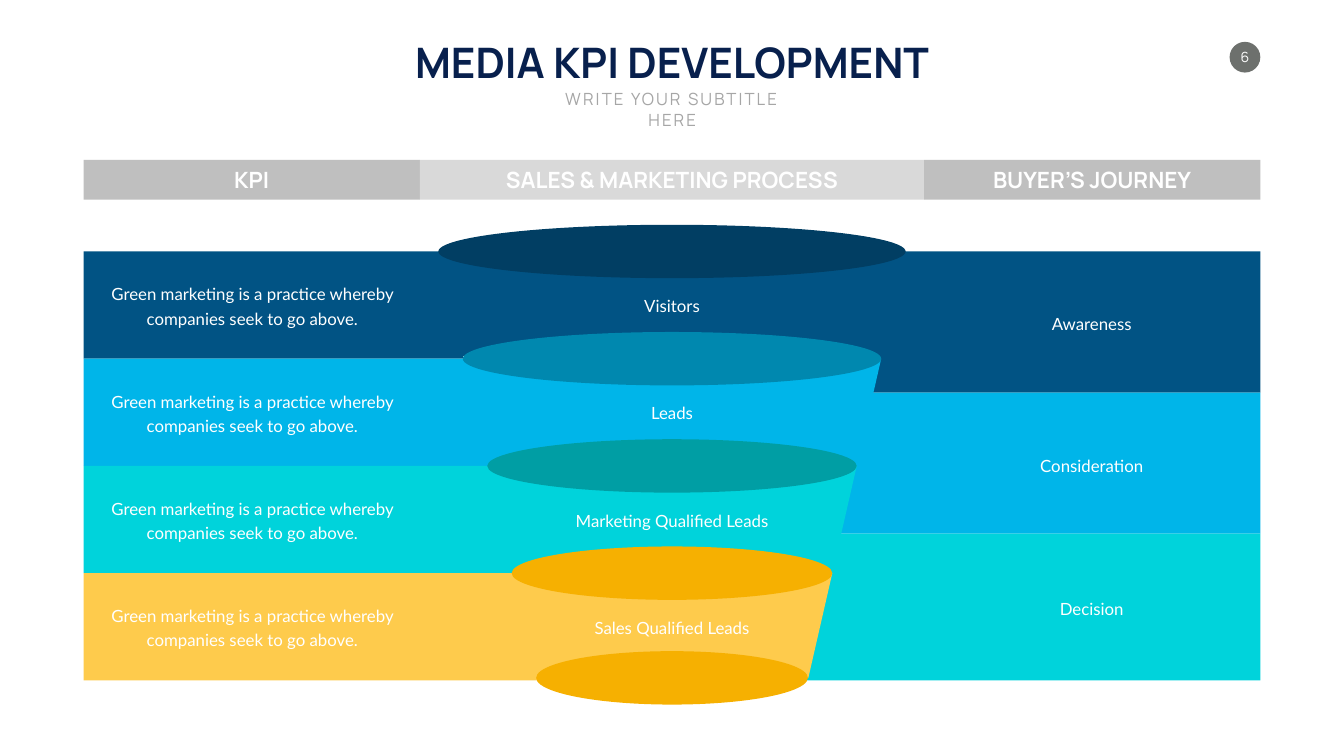
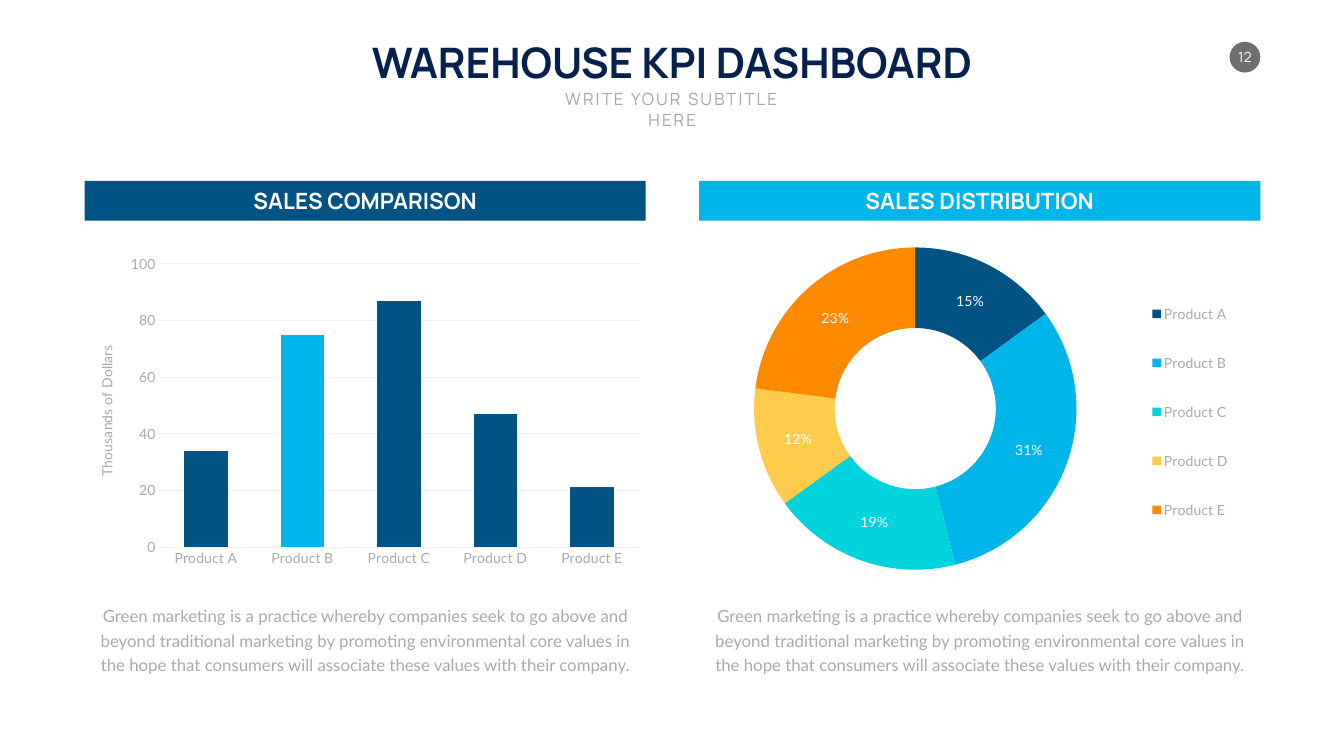
from dataclasses import dataclass

from lxml import etree
from pptx import Presentation
from pptx.chart.data import CategoryChartData
from pptx.dml.color import RGBColor
from pptx.enum.chart import XL_CHART_TYPE as ChartType
from pptx.enum.chart import XL_LEGEND_POSITION as LegendPosition
from pptx.enum.chart import XL_TICK_MARK as TickMark
from pptx.enum.shapes import MSO_SHAPE as Preset
from pptx.enum.text import MSO_ANCHOR as Anchor
from pptx.enum.text import PP_ALIGN as Align
from pptx.oxml.ns import qn
from pptx.util import Inches, Pt


@dataclass(frozen=True)
class Theme:
    heading_font: str = "Manrope"
    body_font: str = "Lato"
    title_size: int = 60
    header_size: int = 32
    body_size: int = 24
    small_size: int = 20
    line_height: int = 35
    white: str = "FFFFFF"
    title: str = "08204D"
    subtitle: str = "A6A6A6"
    text: str = "AAAAAA"
    badge: str = "6D706D"
    grid: str = "F2F2F2"
    header_dark: str = "BFBFBF"
    header_light: str = "D9D9D9"
    navy: str = "015384"
    blue: str = "00B5E9"
    teal: str = "00D3DB"
    yellow: str = "FECB4C"
    orange: str = "FF8A00"
    rims: tuple = ("013E63", "0088AF", "009EA4", "F6B001", "F6B001")


THEME = Theme()
FONTS = {True: THEME.heading_font, False: THEME.body_font}

# Page grid, in inches
WIDTH, HEIGHT = 26.66, 15
CENTER = WIDTH / 2
MARGIN = 1.66
RIGHT = WIDTH - MARGIN
COLUMN = (RIGHT - MARGIN) / 7
BAR_HEIGHT = 0.79

# Funnel slide
FUNNEL_TOP, FUNNEL_BOTTOM = 4.99, 13.5
ROW = (FUNNEL_BOTTOM - FUNNEL_TOP) / 4
ROW_GAP = 0.05
RIM_WIDTH, RIM_STEP, RIM_HEIGHT = 9.27, 0.97, 1.06
SEGMENT_TAPER = 0.95

# Dashboard slide
PANEL_WIDTH = 11.13
PANEL_LEFTS = (1.68, RIGHT - PANEL_WIDTH)
PRODUCTS = [f"Product {letter}" for letter in "ABCDE"]

SUBTITLE = "WRITE YOUR SUBTITLE HERE"
KPI_TEXT = "Green marketing is a practice whereby companies seek to go above."
PANEL_TEXT = ("Green marketing is a practice whereby companies seek to go above and "
              "beyond traditional marketing by promoting environmental core values in "
              "the hope that consumers will associate these values with their company.")


def color(code):
    return RGBColor.from_string(code)


def box(*lengths):
    return [Inches(length) for length in lengths]


def style_font(font, size, code, heading=False, bold=False):
    font.name = FONTS[heading]
    font.size = Pt(size)
    font.color.rgb = color(code)
    font.bold = bold


def write(shape, text, size=THEME.body_size, code=THEME.white, heading=False,
          bold=False, anchor=Anchor.MIDDLE, wrap=True):
    """Fill a shape or text box with one centred paragraph."""
    frame = shape.text_frame
    frame.word_wrap = wrap
    frame.vertical_anchor = anchor
    paragraph = frame.paragraphs[0]
    paragraph.text = text
    paragraph.alignment = Align.CENTER
    if not heading:
        paragraph.line_spacing = Pt(THEME.line_height)
    style_font(paragraph.font, size, code, heading, bold)
    return paragraph


def add_text(slide, place, text, **style):
    return write(slide.shapes.add_textbox(*box(*place)), text, **style)


def paint(shape, fill):
    shape.shadow.inherit = False
    shape.fill.solid()
    shape.fill.fore_color.rgb = color(fill)
    shape.line.fill.background()
    return shape


def add_block(slide, place, fill, preset=Preset.RECTANGLE):
    return paint(slide.shapes.add_shape(preset, *box(*place)), fill)


def add_header(slide, left, top, width, text, fill):
    bar = add_block(slide, (left, top, width, BAR_HEIGHT), fill)
    write(bar, text, size=THEME.header_size, heading=True, bold=True)


def add_segment(slide, top, width, fill, text):
    """Draw one tapered step of the funnel with its label."""
    bottom = top + ROW - ROW_GAP
    half, low_half = width / 2, (width - SEGMENT_TAPER) / 2
    corners = [(CENTER - half, top), (CENTER + half, top),
               (CENTER + low_half, bottom), (CENTER - low_half, bottom)]
    points = [tuple(box(*corner)) for corner in corners]
    builder = slide.shapes.build_freeform(*points[0])
    builder.add_line_segments(points[1:], close=True)
    write(paint(builder.convert_to_shape(), fill), text)


def start_slide(presentation, number, title, title_width):
    """Add a slide with the shared page badge, title and subtitle."""
    slide = presentation.slides.add_slide(presentation.slide_layouts[6])
    badge = add_block(slide, (RIGHT - 0.61, 0.83, 0.61, 0.61), THEME.badge, Preset.OVAL)
    write(badge, str(number), size=THEME.small_size, heading=True, wrap=False)
    add_text(slide, (CENTER - title_width / 2, 0.67, title_width, 1.11), title,
             size=THEME.title_size, code=THEME.title, heading=True, bold=True,
             anchor=Anchor.TOP, wrap=False)
    subtitle = add_text(slide, (10.62, 1.72, 5.43, 0.5), SUBTITLE, code=THEME.subtitle,
                        heading=True, anchor=Anchor.TOP)
    subtitle.runs[0].font._element.set("spc", "300")
    return slide


def set_layout(parent, position, shares, inner=False):
    """Place a plot area or legend by shares of the chart's size."""
    for old in parent.findall(qn("c:layout")):
        parent.remove(old)
    layout = etree.Element(qn("c:layout"))
    manual = etree.SubElement(layout, qn("c:manualLayout"))
    settings = [("layoutTarget", "inner")] if inner else []
    settings += [("xMode", "edge"), ("yMode", "edge")]
    settings += zip("xywh", shares)
    for tag, value in settings:
        etree.SubElement(manual, qn(f"c:{tag}")).set("val", str(value))
    parent.insert(position, layout)


def add_product_chart(slide, kind, left, values, point_colors, plot_shares):
    """Add a one-series product chart with a colour for each point."""
    data = CategoryChartData()
    data.categories = PRODUCTS
    data.add_series("Series 1", values)
    frame = slide.shapes.add_chart(kind, *box(left, 4.91, PANEL_WIDTH, 6.46), data)
    chart = frame.chart
    chart.has_title = False
    chart.has_legend = False
    style_font(chart.font, THEME.small_size, THEME.text)
    for index, code in enumerate(point_colors):
        fill = chart.plots[0].series[0].points[index].format.fill
        fill.solid()
        fill.fore_color.rgb = color(code)
    plot_area = chart._chartSpace.find(f".//{qn('c:plotArea')}")
    set_layout(plot_area, 0, plot_shares, inner=True)
    return chart


def style_line(line):
    line.color.rgb = color(THEME.grid)
    line.width = Pt(0.75)


def add_sales_columns(slide, left):
    columns = [THEME.navy, THEME.blue] + [THEME.navy] * 3
    chart = add_product_chart(slide, ChartType.COLUMN_CLUSTERED, left,
                              (34, 75, 87, 47, 21), columns, (0.13, 0.05, 0.86, 0.87))
    plot = chart.plots[0]
    plot.gap_width = 122
    plot.vary_by_categories = False
    for axis in (chart.category_axis, chart.value_axis):
        axis.major_tick_mark = axis.minor_tick_mark = TickMark.NONE
        style_font(axis.tick_labels.font, THEME.small_size, THEME.text)
    style_line(chart.category_axis.format.line)
    axis = chart.value_axis
    axis.minimum_scale, axis.maximum_scale, axis.major_unit = 0, 100, 20
    axis.format.line.fill.background()
    style_line(axis.major_gridlines.format.line)
    title = axis.axis_title.text_frame
    title.text = "Thousands of Dollars"
    style_font(title.paragraphs[0].font, THEME.small_size, THEME.text)
    title._txBody.bodyPr.set("rot", "-5400000")
    title._txBody.bodyPr.set("vert", "horz")


def add_sales_doughnut(slide, left):
    slices = (THEME.navy, THEME.blue, THEME.teal, THEME.yellow, THEME.orange)
    chart = add_product_chart(slide, ChartType.DOUGHNUT, left, (15, 31, 19, 12, 23),
                              slices, (0.09, 0.0, 0.59, 0.99))
    plot = chart.plots[0]
    plot.has_data_labels = True
    labels = plot.data_labels
    labels.show_percentage = True
    labels.show_value = False
    labels.number_format = "0%"
    labels.number_format_is_linked = False
    style_font(labels.font, THEME.small_size, THEME.white)
    chart.has_legend = True
    legend = chart.legend
    legend.position = LegendPosition.RIGHT
    legend.include_in_layout = False
    style_font(legend.font, THEME.small_size, THEME.text)
    set_layout(legend._element, 1, (0.79, 0.08, 0.17, 0.85))


def build_funnel_slide(presentation):
    slide = start_slide(presentation, 6, "MEDIA KPI DEVELOPMENT", 10.72)

    # Column headers: first column, columns spanned
    headers = [(0, 2, "KPI", THEME.header_dark),
               (2, 3, "SALES & MARKETING PROCESS", THEME.header_light),
               (5, 2, "BUYER’S JOURNEY", THEME.header_dark)]
    for first, span, text, fill in headers:
        add_header(slide, MARGIN + first * COLUMN, 3.17, span * COLUMN, text, fill)

    # Buyer's journey bands: left edge, top, bottom
    stages = [("Awareness", 16.52, FUNNEL_TOP, 7.79, THEME.navy),
              ("Consideration", 16.52, 7.79, 10.59, THEME.blue),
              ("Decision", 15.85, 10.59, FUNNEL_BOTTOM, THEME.teal)]
    for text, left, top, bottom, fill in stages:
        add_block(slide, (left, top, RIGHT - left, bottom - top), fill)
        add_text(slide, (19.13, (top + bottom) / 2 - 0.27, 5.05, 0.54), text)

    # KPI bands, with the funnel step that each one leads to
    steps = [("Visitors", 7.52, THEME.navy), ("Leads", 8.17, THEME.blue),
             ("Marketing Qualified Leads", 8.97, THEME.teal),
             ("Sales Qualified Leads", 9.5, THEME.yellow)]
    for row, (text, width, fill) in enumerate(steps):
        top = FUNNEL_TOP + row * ROW
        add_block(slide, (MARGIN, top, width, ROW), fill)
        add_text(slide, (2.09, top + 0.53, 5.83, 1.03), KPI_TEXT)
    for row, (text, width, fill) in enumerate(steps):
        add_segment(slide, FUNNEL_TOP + row * ROW, RIM_WIDTH - row * RIM_STEP, fill, text)

    # Rims of the funnel
    for row, fill in enumerate(THEME.rims):
        width = RIM_WIDTH - row * RIM_STEP
        middle = min(FUNNEL_TOP + row * ROW, FUNNEL_BOTTOM - ROW_GAP)
        add_block(slide, (CENTER - width / 2, middle - RIM_HEIGHT / 2, width, RIM_HEIGHT),
                  fill, Preset.OVAL)


def build_dashboard_slide(presentation):
    slide = start_slide(presentation, 12, "WAREHOUSE KPI DASHBOARD", 12.63)
    panels = [("SALES COMPARISON", THEME.navy, add_sales_columns),
              ("SALES DISTRIBUTION", THEME.blue, add_sales_doughnut)]
    for left, (text, fill, add_panel_chart) in zip(PANEL_LEFTS, panels):
        add_header(slide, left, 3.59, PANEL_WIDTH, text, fill)
        add_panel_chart(slide, left)
        add_text(slide, (left, 11.89, PANEL_WIDTH, 1.52), PANEL_TEXT,
                 code=THEME.text, anchor=Anchor.TOP)


def main():
    presentation = Presentation()
    presentation.slide_width, presentation.slide_height = box(WIDTH, HEIGHT)
    build_funnel_slide(presentation)
    build_dashboard_slide(presentation)
    presentation.save("out.pptx")


if __name__ == "__main__":
    main()
